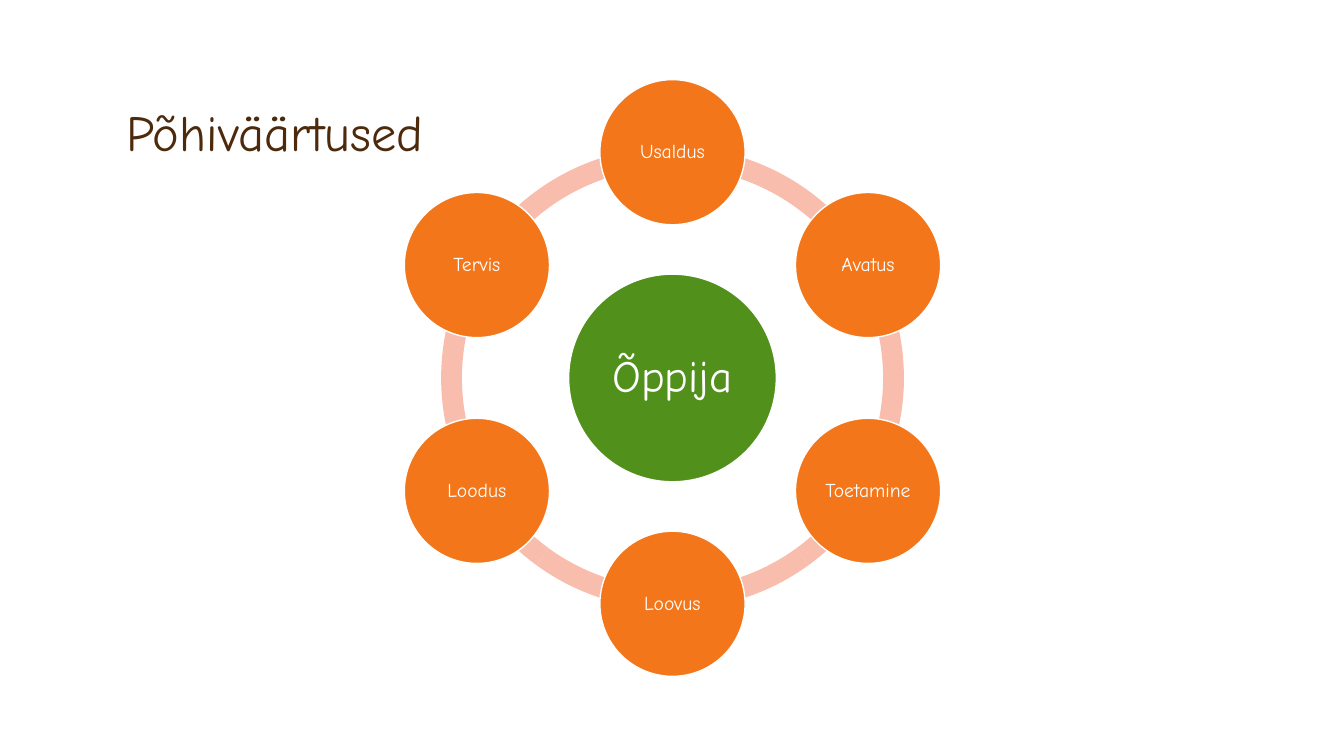
from itertools import pairwise
from math import cos, radians, sin

from pptx import Presentation
from pptx.dml.color import RGBColor
from pptx.enum.shapes import MSO_SHAPE
from pptx.enum.text import MSO_ANCHOR, PP_ALIGN
from pptx.util import Inches, Pt

ARC, OVAL = MSO_SHAPE.BLOCK_ARC, MSO_SHAPE.OVAL
BOTTOM, MIDDLE = MSO_ANCHOR.BOTTOM, MSO_ANCHOR.MIDDLE
LEFT, CENTER = PP_ALIGN.LEFT, PP_ALIGN.CENTER

FONT = "Comic Neue"
COLORS = {
    "title": "4D2A0B",
    "ring": "F8BDAC",
    "learner": "52901C",
    "value": "F3771A",
    "white": "FFFFFF",
}
VALUES = ["Usaldus", "Avatus", "Toetamine", "Loovus", "Loodus", "Tervis"]
CENTER_X, CENTER_Y = 6.67, 3.75
ORBIT = 2.24
RING_SIZE, RING_THICKNESS = 4.59, 0.045
RING_STOPS = [162, 126, 90, 54, 18, 198, 162]


def color(name):
    return RGBColor.from_string(COLORS[name])


def write(tf, text, size, fill="white", align=CENTER, anchor=MIDDLE, inset=None):
    tf.word_wrap = True
    tf.vertical_anchor = anchor
    if inset is not None:
        tf.margin_left = tf.margin_right = Inches(inset)
        tf.margin_top = tf.margin_bottom = Inches(inset)
    p = tf.paragraphs[0]
    p.alignment = align
    p.line_spacing = 0.9
    r = p.add_run()
    r.text = text
    r.font.name = FONT
    r.font.size = Pt(size)
    r.font.color.rgb = color(fill)


class ValuesSlide:
    def __init__(self, prs):
        self.s = prs.slides.add_slide(prs.slide_layouts[6])
        self.diagram = None

    def title(self, text):
        sp = self.s.shapes.add_textbox(
            Inches(1.16), Inches(0.33), Inches(11), Inches(1.33))
        write(sp.text_frame, text, 36, "title", LEFT, BOTTOM)

    def start_diagram(self):
        self.diagram = self.s.shapes.add_group_shape()

    def centred_shape(self, kind, x, y, size, fill):
        sp = self.diagram.shapes.add_shape(
            kind, Inches(x - size / 2), Inches(y - size / 2),
            Inches(size), Inches(size))
        sp.shadow.inherit = False
        sp.fill.solid()
        sp.fill.fore_color.rgb = color(fill)
        return sp

    def arc(self, start, end):
        """Draw a ring segment clockwise between two angles in degrees."""
        sp = self.centred_shape(ARC, CENTER_X, CENTER_Y, RING_SIZE, "ring")
        sp.line.fill.background()
        # One adjustment unit is 100000, one degree is 60000
        sp.adjustments[0] = start * 0.6
        sp.adjustments[1] = end * 0.6
        sp.adjustments[2] = RING_THICKNESS

    def circle(self, text, x, y, size, fill, font_size, inset):
        sp = self.centred_shape(OVAL, x, y, size, fill)
        sp.line.color.rgb = color("white")
        sp.line.width = Pt(1)
        write(sp.text_frame, text, font_size, inset=inset)


def main():
    prs = Presentation()
    prs.slide_width, prs.slide_height = Inches(13.33), Inches(7.5)

    slide = ValuesSlide(prs)
    slide.title("Põhiväärtused")
    slide.start_diagram()
    for end, start in pairwise(RING_STOPS):
        slide.arc(start, end)
    slide.circle("Õppija", CENTER_X, CENTER_Y, 2.06, "learner", 32, 0.04)
    for i, value in enumerate(VALUES):
        angle = radians(360 / len(VALUES) * i - 90)
        slide.circle(value, CENTER_X + ORBIT * cos(angle),
                     CENTER_Y + ORBIT * sin(angle), 1.44, "value", 14, 0.02)

    prs.save("out.pptx")


if __name__ == "__main__":
    main()
